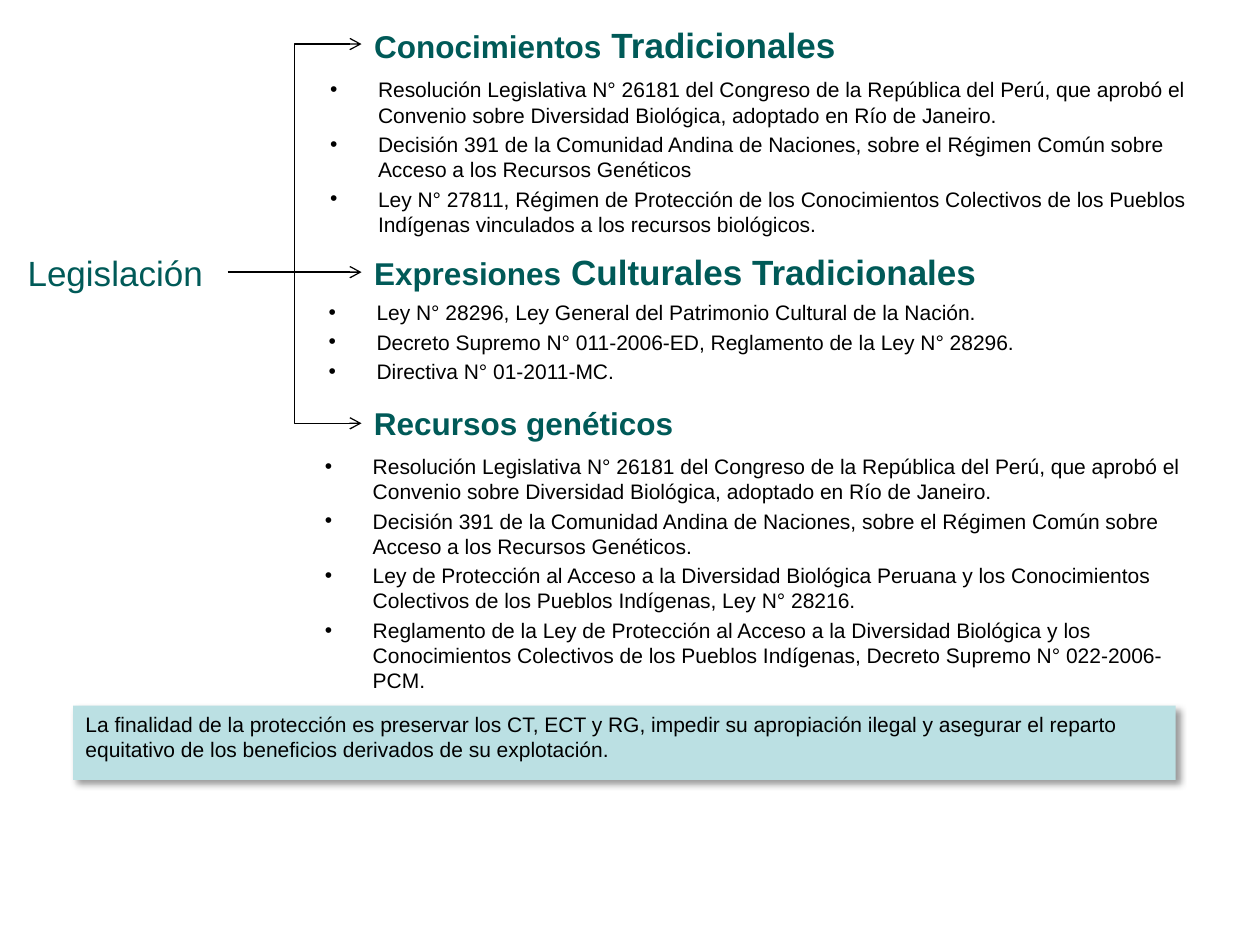
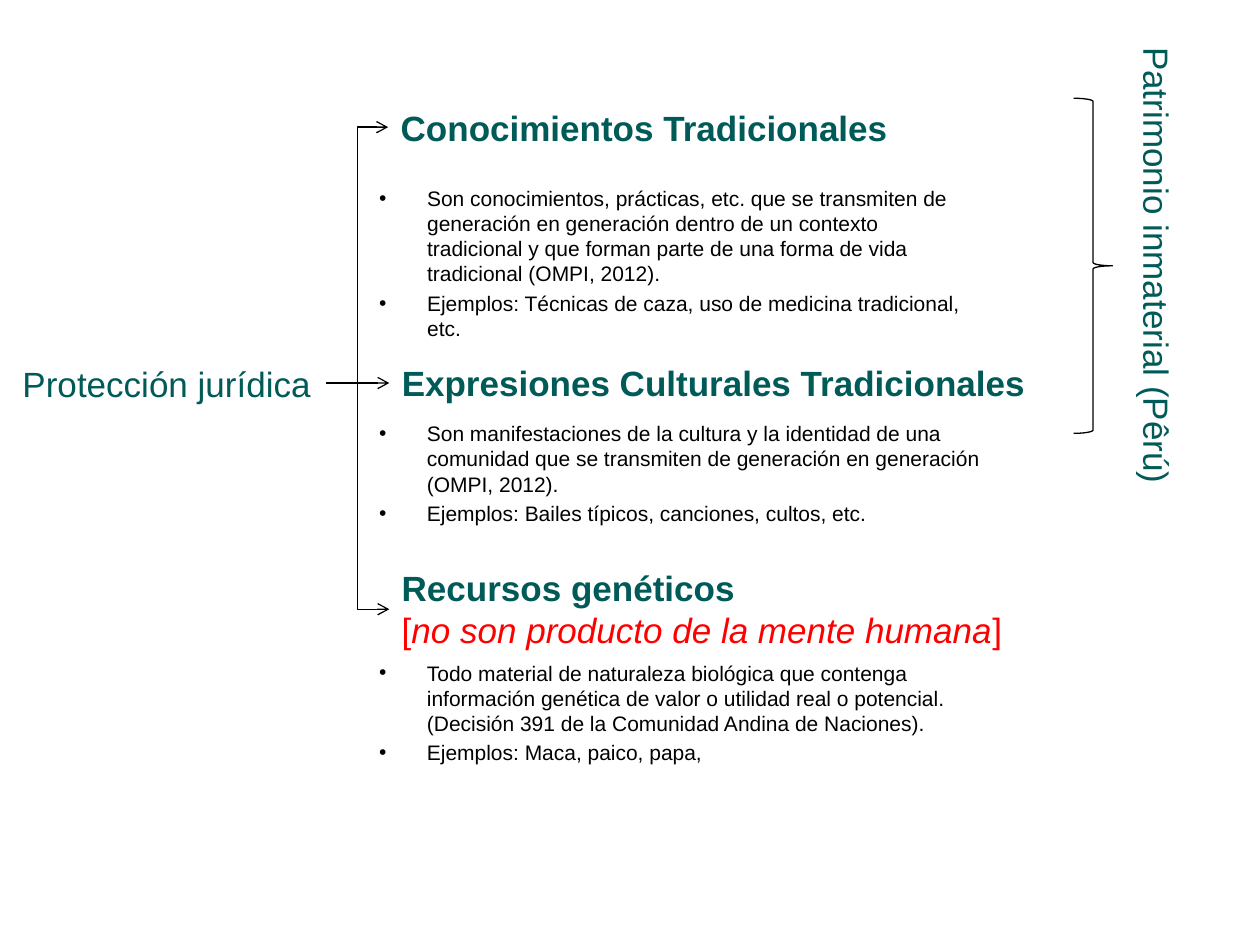
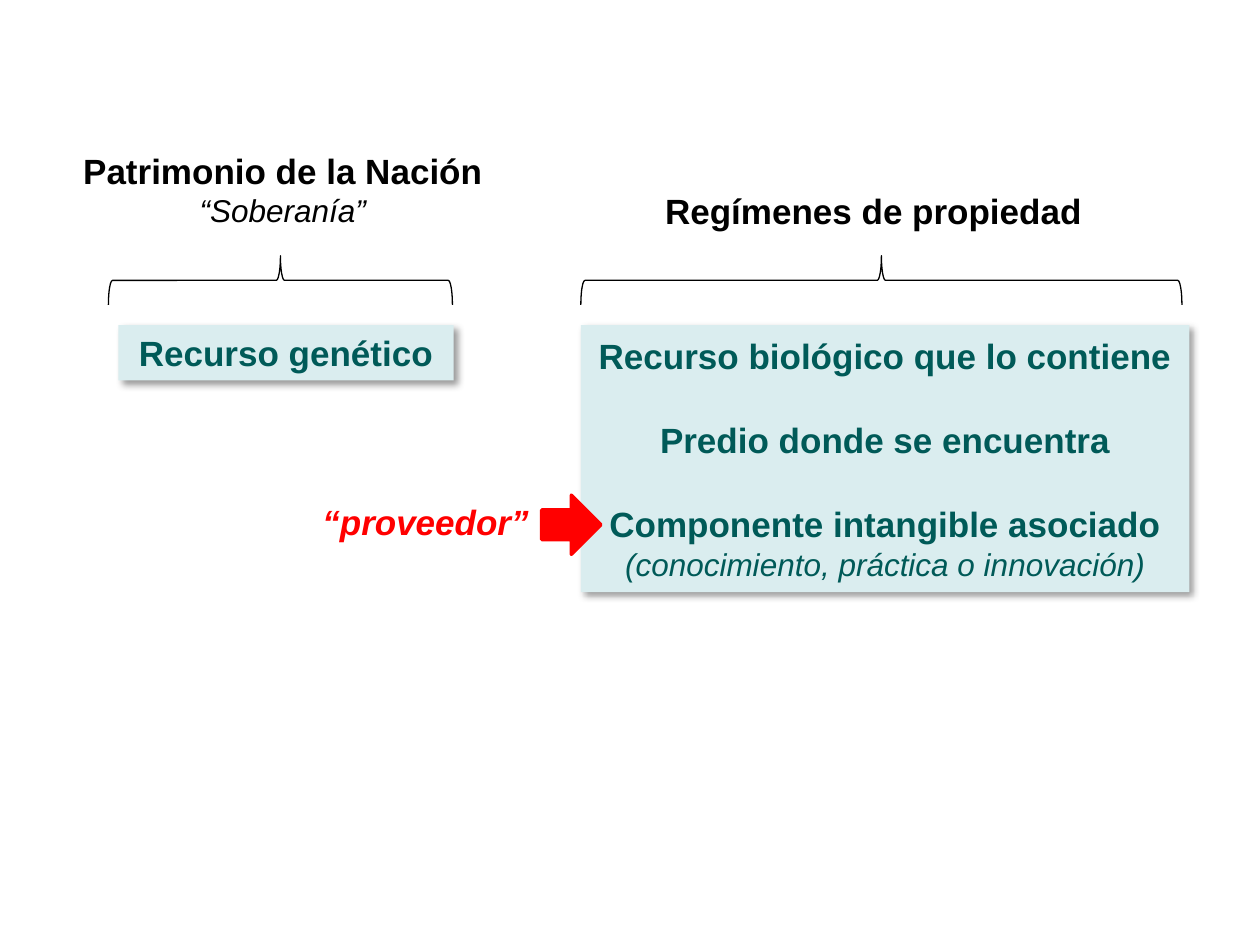
from dataclasses import dataclass, replace

from lxml.etree import SubElement
from pptx import Presentation
from pptx.dml.color import RGBColor
from pptx.enum.shapes import MSO_CONNECTOR, MSO_SHAPE
from pptx.enum.text import MSO_ANCHOR, MSO_AUTO_SIZE, PP_ALIGN
from pptx.oxml import parse_xml
from pptx.oxml.ns import nsdecls, qn
from pptx.util import Inches, Pt


@dataclass(frozen=True)
class Theme:
    font: str = "Arial"
    teal: str = "005A58"
    black: str = "000000"
    red: str = "FF0000"
    callout_fill: str = "BBE0E3"
    panel_fill: str = "DAEDEF"
    heading: float = 20
    subheading: float = 18
    body: float = 12
    item_gap: float = 2.4
    panel_gap: float = 24
    line: float = 0.75
    indent: float = 0.38


THEME = Theme()


@dataclass(frozen=True)
class Run:
    text: str
    size: float = THEME.heading
    color: str = THEME.teal
    bold: bool = False
    italic: bool = False


@dataclass(frozen=True)
class Line:
    runs: tuple[Run, ...]
    gap: float = 0


@dataclass(frozen=True)
class Box:
    left: float
    top: float
    width: float
    height: float


@dataclass(frozen=True)
class Branch:
    heading_box: Box
    heading: tuple[Line, ...]
    list_box: Box
    items: tuple[str, ...]


@dataclass(frozen=True)
class Tree:
    root_box: Box
    root: str
    branches: tuple[Branch, ...]


def bold_line(text: str, color: str = THEME.teal, gap: float = 0) -> Line:
    return Line((Run(text, color=color, bold=True),), gap)


def italic_line(text: str, color: str) -> Line:
    return Line((Run(text, THEME.subheading, color, italic=True),))


def place(shape, box: Box) -> None:
    shape.left, shape.top = Inches(box.left), Inches(box.top)
    shape.width, shape.height = Inches(box.width), Inches(box.height)


def add_bullet(paragraph) -> None:
    properties = paragraph._p.get_or_add_pPr()
    properties.set("marL", str(Inches(THEME.indent)))
    properties.set("indent", str(-Inches(THEME.indent)))
    SubElement(properties, qn("a:buFont")).set("typeface", THEME.font)
    SubElement(properties, qn("a:buChar")).set("char", "•")


def write(shape, lines: tuple[Line, ...], *, align=PP_ALIGN.LEFT, anchor=MSO_ANCHOR.TOP,
          wrap: bool = False, grow: bool = True, bullets: bool = False) -> None:
    frame = shape.text_frame
    frame.word_wrap = wrap
    frame.auto_size = MSO_AUTO_SIZE.SHAPE_TO_FIT_TEXT if grow else MSO_AUTO_SIZE.NONE
    frame.vertical_anchor = anchor
    for index, line in enumerate(lines):
        paragraph = frame.add_paragraph() if index else frame.paragraphs[0]
        if bullets:
            add_bullet(paragraph)
        paragraph.alignment = align
        paragraph.space_before = Pt(line.gap)
        for part in line.runs:
            run = paragraph.add_run()
            run.text = part.text
            run.font.name = THEME.font
            run.font.size = Pt(part.size)
            run.font.bold = part.bold
            run.font.italic = part.italic
            run.font.color.rgb = RGBColor.from_string(part.color)


def add_text(slide, box: Box, lines: tuple[Line, ...], **options):
    shape = slide.shapes.add_textbox(0, 0, 0, 0)
    place(shape, box)
    write(shape, lines, **options)
    return shape


def write_list(shape, items: tuple[str, ...]) -> None:
    lines = tuple(Line((Run(item, THEME.body, THEME.black),), THEME.item_gap if index else 0)
                  for index, item in enumerate(items))
    write(shape, lines, wrap=True, grow=False, bullets=True)


def add_panel(slide, box: Box, fill: str, lines: tuple[Line, ...], **options) -> None:
    """Filled rectangle with a soft shadow."""
    shape = slide.shapes.add_shape(MSO_SHAPE.RECTANGLE, 0, 0, 0, 0)
    place(shape, box)
    shape.fill.solid()
    shape.fill.fore_color.rgb = RGBColor.from_string(fill)
    shape.line.fill.background()
    shape._element.spPr.append(parse_xml(
        f'<a:effectLst {nsdecls("a")}><a:outerShdw blurRad="{Pt(4)}" dist="{Pt(3)}" '
        f'dir="2700000" algn="tl" rotWithShape="0"><a:srgbClr val="{THEME.black}">'
        '<a:alpha val="40000"/></a:srgbClr></a:outerShdw></a:effectLst>'))
    write(shape, lines, **options)


def add_brace(slide, kind, box: Box, rotation: float = 0) -> None:
    brace = slide.shapes.add_shape(kind, 0, 0, 0, 0)
    place(brace, box)
    brace.rotation = rotation
    brace.shadow.inherit = False
    brace.fill.background()
    brace.line.color.rgb = RGBColor.from_string(THEME.black)
    brace.line.width = Pt(THEME.line)


def connect(slide, kind, root, heading) -> None:
    """Arrow from the right side of the root to the left side of a heading."""
    connector = slide.shapes.add_connector(
        kind, root.left + root.width, root.top + root.height // 2,
        heading.left, heading.top + heading.height // 2)
    connector.begin_connect(root, 3)
    connector.end_connect(heading, 1)
    connector.line.color.rgb = RGBColor.from_string(THEME.black)
    connector.line.width = Pt(THEME.line)
    SubElement(connector.line._get_or_add_ln(), qn("a:tailEnd")).set("type", "arrow")
    SubElement(connector._element.spPr, qn("a:effectLst"))


def add_tree_slide(presentation, tree: Tree):
    """Root term on the left, three headings with lists on the right."""
    slide = presentation.slides.add_slide(presentation.slide_layouts[1])
    root = add_text(slide, tree.root_box, (Line((Run(tree.root),)),), anchor=MSO_ANCHOR.MIDDLE)
    for index, branch in enumerate(tree.branches):
        if index == 0:
            heading, body = slide.shapes.title, slide.placeholders[1]
            place(heading, branch.heading_box)
            write(heading, branch.heading, anchor=MSO_ANCHOR.MIDDLE)
        else:
            heading = add_text(slide, branch.heading_box, branch.heading)
            body = slide.shapes.add_textbox(0, 0, 0, 0)
        place(body, branch.list_box)
        write_list(body, branch.items)
        kind = MSO_CONNECTOR.STRAIGHT if index == 1 else MSO_CONNECTOR.ELBOW
        connect(slide, kind, root, heading)
    return slide


CONVENTION = ("Resolución Legislativa N° 26181 del Congreso de la República del Perú, que aprobó "
              "el Convenio sobre Diversidad Biológica, adoptado en Río de Janeiro.")
DECISION = ("Decisión 391 de la Comunidad Andina de Naciones, sobre el Régimen Común sobre "
            "Acceso a los Recursos Genéticos")

LEGISLATION = Tree(Box(0.12, 1.94, 1.69, 0.44), "Legislación", (
    Branch(Box(2.87, 0.13, 3.89, 0.44),
           (Line((Run("Conocimientos", THEME.subheading, bold=True),
                  Run(" Tradicionales", bold=True))),),
           Box(2.52, 0.56, 7.04, 0.91),
           (CONVENTION, DECISION,
            "Ley N° 27811, Régimen de Protección de los Conocimientos Colectivos de los Pueblos "
            "Indígenas vinculados a los recursos biológicos.")),
    Branch(Box(2.87, 1.94, 5.19, 0.44),
           (Line((Run("Expresiones", THEME.subheading, bold=True),
                  Run(" Culturales Tradicionales", bold=True))),),
           Box(2.51, 2.33, 7.21, 0.83),
           ("Ley N° 28296, Ley General del Patrimonio Cultural de la Nación.",
            "Decreto Supremo N° 011-2006-ED, Reglamento de la Ley N° 28296.",
            "Directiva N° 01-2011-MC.")),
    Branch(Box(2.87, 3.16, 2.6, 0.4),
           (Line((Run("Recursos genéticos", THEME.subheading, bold=True),)),),
           Box(2.48, 3.55, 7.25, 1.06),
           (CONVENTION, DECISION + ".",
            "Ley de Protección al Acceso a la Diversidad Biológica Peruana y los Conocimientos "
            "Colectivos de los Pueblos Indígenas, Ley N° 28216.",
            "Reglamento de la Ley de Protección al Acceso a la Diversidad Biológica y los "
            "Conocimientos Colectivos de los Pueblos Indígenas, Decreto Supremo "
            "N° 022-2006-PCM.")),
))

PROTECTION = Tree(Box(0.08, 2.82, 2.51, 0.44), "Protección jurídica", (
    Branch(Box(3.08, 0.79, 4.1, 0.44), (bold_line("Conocimientos Tradicionales"),),
           Box(2.91, 1.42, 4.84, 0.91),
           ("Son conocimientos, prácticas, etc. que se transmiten de generación en generación "
            "dentro de un contexto tradicional y que forman parte de una forma de vida "
            "tradicional (OMPI, 2012).",
            "Ejemplos: Técnicas de caza, uso de medicina tradicional, etc.")),
    Branch(Box(3.09, 2.82, 5.19, 0.44), (bold_line("Expresiones Culturales Tradicionales"),),
           Box(2.91, 3.29, 5.31, 1.06),
           ("Son manifestaciones de la cultura y la identidad de una comunidad que se "
            "transmiten de generación en generación (OMPI, 2012).",
            "Ejemplos: Bailes típicos, canciones, cultos, etc.")),
    Branch(Box(3.09, 4.45, 5, 0.77),
           (bold_line("Recursos genéticos"),
            Line((Run("[", color=THEME.red),
                  Run("no son producto de la mente humana", color=THEME.red, italic=True),
                  Run("]", color=THEME.red)))),
           Box(2.91, 5.19, 4.81, 1.06),
           ("Todo material de naturaleza biológica que contenga información genética de valor o "
            "utilidad real o potencial. (Decisión 391 de la Comunidad Andina de Naciones).",
            "Ejemplos: Maca, paico, papa,")),
))


def build_legislation(presentation) -> None:
    slide = add_tree_slide(presentation, LEGISLATION)
    purpose = Run("La finalidad de la protección es preservar los CT, ECT y RG, impedir su "
                  "apropiación ilegal y asegurar el reparto equitativo de los beneficios "
                  "derivados de su explotación.", THEME.body, THEME.black)
    add_panel(slide, Box(0.58, 5.6, 8.75, 0.59), THEME.callout_fill, (Line((purpose,)),),
              wrap=True, grow=False)


def build_protection(presentation) -> None:
    slide = add_tree_slide(presentation, PROTECTION)
    heritage = add_text(slide, Box(7.34, 1.9, 3.69, 0.44),
                        (Line((Run("Patrimonio inmaterial (Pêrú)"),)),),
                        anchor=MSO_ANCHOR.MIDDLE)
    heritage.rotation = 90
    add_brace(slide, MSO_SHAPE.RIGHT_BRACE, Box(8.52, 0.78, 0.31, 2.66))


def build_ownership(presentation) -> None:
    slide = presentation.slides.add_slide(presentation.slide_layouts[6])
    centered = {"align": PP_ALIGN.CENTER, "anchor": MSO_ANCHOR.MIDDLE}

    # Resource panels
    add_panel(slide, Box(0.94, 2.58, 2.66, 0.44), THEME.panel_fill,
              (bold_line("Recurso genético"),), wrap=True, **centered)
    add_panel(slide, Box(4.61, 2.58, 4.83, 2.12), THEME.panel_fill,
              (bold_line("Recurso biológico que lo contiene"),
               bold_line("Predio donde se encuentra", gap=THEME.panel_gap),
               bold_line("Componente intangible asociado", gap=THEME.panel_gap),
               italic_line("(conocimiento, práctica o innovación)", THEME.teal)), **centered)

    # Regimes above the braces
    add_text(slide, Box(0.55, 1.13, 3.39, 0.74),
             (bold_line("Patrimonio de la Nación", THEME.black),
              italic_line("“Soberanía”", THEME.black)), **centered)
    add_text(slide, Box(5.18, 1.45, 3.54, 0.44),
             (bold_line("Regímenes de propiedad", THEME.black),), anchor=MSO_ANCHOR.MIDDLE)
    for box in (Box(2.03, 0.86, 0.39, 2.73), Box(6.8, -0.16, 0.39, 4.77)):
        add_brace(slide, MSO_SHAPE.LEFT_BRACE, box, rotation=90)

    # Provider pointer
    provider = replace(Run("“proveedor”", color=THEME.red, bold=True), italic=True)
    add_text(slide, Box(2.46, 3.92, 1.85, 0.44), (Line((provider,)),), anchor=MSO_ANCHOR.MIDDLE)
    arrow = slide.shapes.add_shape(MSO_SHAPE.RIGHT_ARROW, 0, 0, 0, 0)
    place(arrow, Box(4.3, 3.93, 0.47, 0.47))
    arrow.shadow.inherit = False
    arrow.fill.solid()
    arrow.fill.fore_color.rgb = arrow.line.color.rgb = RGBColor.from_string(THEME.red)
    arrow.line.width = Pt(2)


def main() -> None:
    presentation = Presentation()
    presentation.slide_width, presentation.slide_height = Inches(10), Inches(7.5)
    build_legislation(presentation)
    build_protection(presentation)
    build_ownership(presentation)
    presentation.save("out.pptx")


if __name__ == "__main__":
    main()
